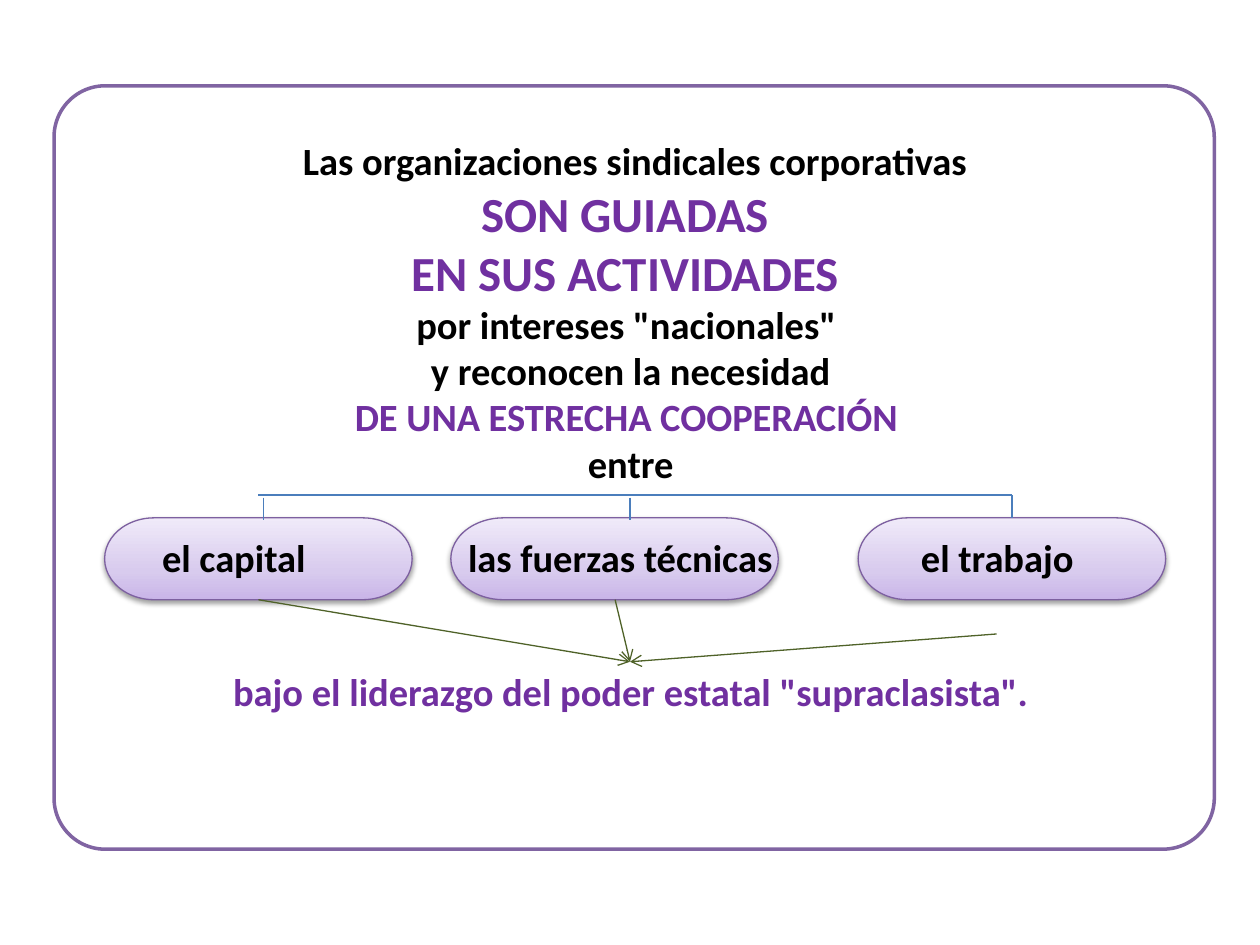
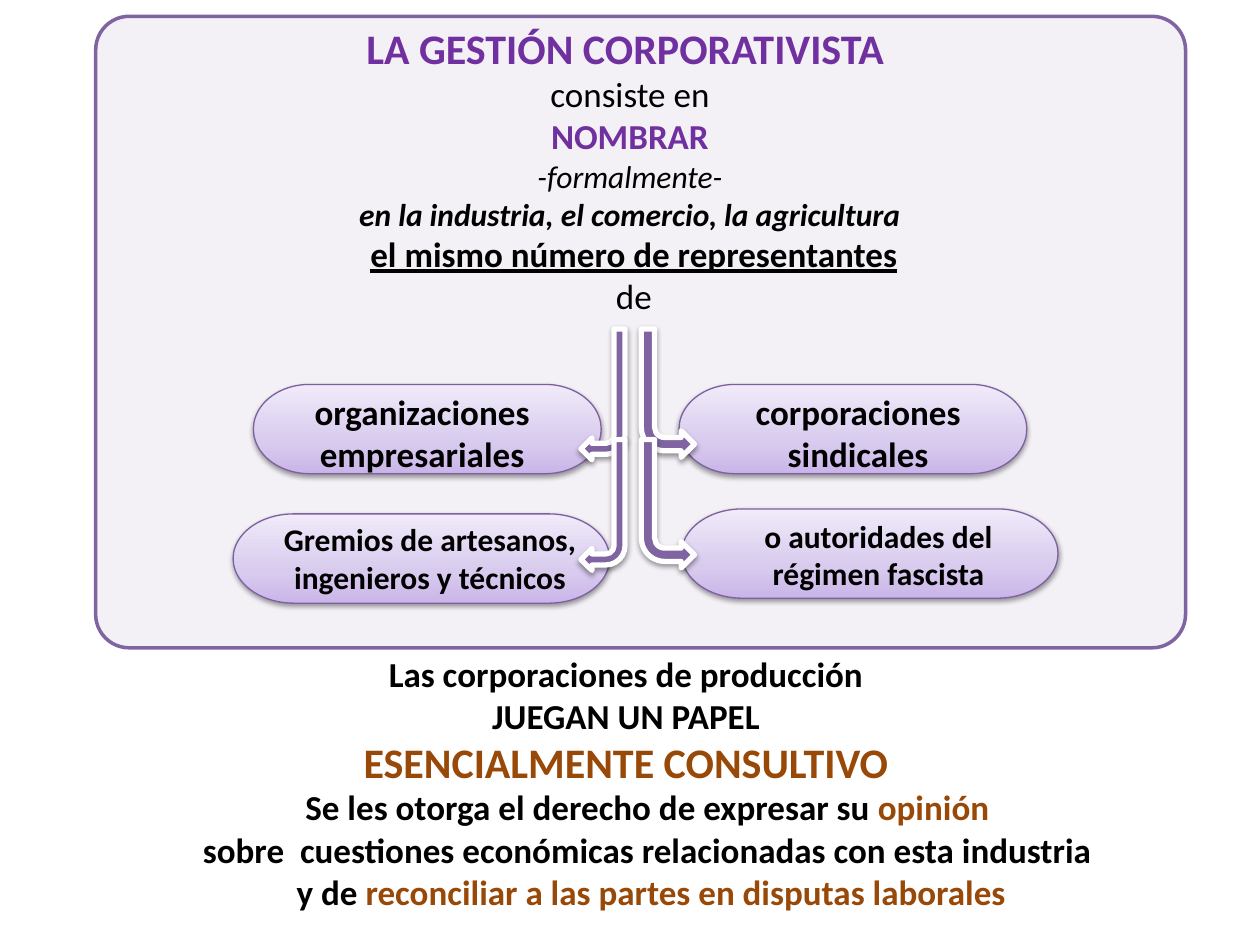
from dataclasses import dataclass

from lxml import etree
from pptx import Presentation
from pptx.dml.color import RGBColor
from pptx.enum.shapes import MSO_CONNECTOR, MSO_SHAPE
from pptx.enum.text import PP_ALIGN
from pptx.oxml import parse_xml
from pptx.oxml.ns import qn
from pptx.util import Cm, Pt

ROUND = MSO_SHAPE.ROUNDED_RECTANGLE
PILL = MSO_SHAPE.FLOWCHART_TERMINATOR
BENT = MSO_SHAPE.BENT_ARROW
LINE = MSO_CONNECTOR.STRAIGHT
CENTER = PP_ALIGN.CENTER
NS = 'xmlns:a="http://schemas.openxmlformats.org/drawingml/2006/main"'


@dataclass(frozen=True)
class Theme:
    font: str = "Calibri"
    ink: str = "000000"
    white: str = "FFFFFF"
    violet: str = "7030A0"
    brown: str = "984807"
    frame: str = "8064A2"
    pale: str = "F3F0F6"
    edge: str = "7D60A0"
    blue: str = "4B7EBC"
    olive: str = "4F6228"
    fade: tuple = ((0, "C9B5E8"), (35, "D8CBEE"), (100, "F0EAF9"))
    huge: int = 28
    large: int = 24
    lead: int = 22
    body: int = 20
    small: int = 18
    thin: float = 0.75
    thick: float = 2
    rim: float = 3


T = Theme()


def rgb(code):
    return RGBColor.from_string(code)


def run(text, size, color=T.ink, style="b"):
    return text, size, color, style


def write(slide, box, *lines):
    frame = slide.shapes.add_textbox(*map(Cm, box)).text_frame
    frame.word_wrap = True
    for index, parts in enumerate(lines):
        para = frame.paragraphs[0] if index == 0 else frame.add_paragraph()
        para.alignment = CENTER
        for text, size, color, style in parts:
            piece = para.add_run()
            piece.text = text
            font = piece.font
            font.name = T.font
            font.size = Pt(size)
            font.color.rgb = rgb(color)
            font.bold = "b" in style
            font.italic = "i" in style
            font.underline = "u" in style


def shape(slide, kind, box, fill, edge, width):
    item = slide.shapes.add_shape(kind, *map(Cm, box))
    item.shadow.inherit = False
    item.fill.solid()
    item.fill.fore_color.rgb = rgb(fill)
    item.line.color.rgb = rgb(edge)
    item.line.width = Pt(width)
    return item


def shade(item):
    effects = item._element.spPr.find(qn("a:effectLst"))
    effects.append(parse_xml(
        f'<a:outerShdw {NS} blurRad="{Pt(3.1)}" dist="{Pt(1.6)}" dir="5400000" rotWithShape="0">'
        f'<a:srgbClr val="{T.ink}"><a:alpha val="38000"/></a:srgbClr></a:outerShdw>'))


def panel(slide, box, fill, curve):
    item = shape(slide, ROUND, box, fill, T.frame, T.thick)
    item.adjustments[0] = curve


def pill(slide, box):
    item = shape(slide, PILL, box, T.pale, T.edge, T.thin)
    stops = "".join(f'<a:gs pos="{spot * 1000}"><a:srgbClr val="{code}"/></a:gs>'
                    for spot, code in T.fade)
    props = item._element.spPr
    props.replace(props.find(qn("a:solidFill")), parse_xml(
        f'<a:gradFill {NS} rotWithShape="1"><a:gsLst>{stops}</a:gsLst>'
        '<a:lin ang="16200000" scaled="0"/></a:gradFill>'))
    shade(item)


def bend(slide, box, flip=False):
    item = shape(slide, BENT, box, T.frame, T.white, T.rim)
    item.rotation = 180
    if flip:
        item._element.spPr.find(qn("a:xfrm")).set("flipH", "1")
    shade(item)


def link(slide, start, end, color, arrow=False):
    item = slide.shapes.add_connector(LINE, *map(Cm, start + end))
    item.line.color.rgb = rgb(color)
    item.line.width = Pt(T.thin)
    if arrow:
        etree.SubElement(item.line._get_or_add_ln(), qn("a:tailEnd"), type="arrow")
    etree.SubElement(item._element.spPr, qn("a:effectLst"))


def guide(slide):
    panel(slide, (1.09, 1.73, 23.39, 15.39), T.white, 0.067)
    for left, width in ((2.11, 6.2), (9.09, 6.6), (17.3, 6.2)):
        pill(slide, (left, 10.44, width, 1.65))
    write(slide, (2.11, 2.64, 21.21, 7.34),
          [run(" Las organizaciones sindicales corporativas", T.lead)],
          [run("SON GUIADAS ", T.huge, T.violet)],
          [run("EN SUS ACTIVIDADES ", T.huge, T.violet)],
          [run('por intereses "nacionales" ', T.lead)],
          [run("y reconocen la necesidad", T.lead)],
          [run("DE UNA ESTRECHA COOPERACIÓN ", T.lead, T.violet)],
          [run("entre", T.lead)])
    write(slide, (2.11, 13.34, 21.21, 1.19),
          [run('bajo el liderazgo del poder estatal "supraclasista".', T.lead, T.violet)])
    for left, width, text in ((2.11, 5.21, "el capital"),
                              (8.71, 7.59, "las fuerzas técnicas"),
                              (17.5, 5.21, "el trabajo")):
        write(slide, (left, 10.64, width, 1.19), [run(text, T.lead)])
    link(slide, (5.21, 9.98), (20.4, 9.98), T.blue)
    for left, top in ((20.4, 9.98), (12.7, 10.03), (5.31, 10.03)):
        link(slide, (left, top), (left, top + 0.46), T.blue)
    for start in ((20.09, 12.78), (5.21, 12.09), (12.4, 12.09)):
        link(slide, start, (12.7, 13.34), T.olive, arrow=True)


def manage(slide):
    panel(slide, (1.93, 0.33, 21.97, 12.73), T.pale, 0.053)
    for left, top, width in ((4.7, 10.36, 7.59), (5.11, 7.75, 7.01),
                             (13.69, 7.75, 7.01), (13.74, 10.26, 7.59)):
        pill(slide, (left, top, width, 1.8))
    write(slide, (1.5, 0.33, 22.4, 7.09),
          [run("LA GESTIÓN CORPORATIVISTA ", T.large, T.violet)],
          [run("consiste en", T.body, style="")],
          [run("NOMBRAR", T.body, T.violet)],
          [run("-formalmente-", T.small, style="i")],
          [run("en la industria, el comercio, la agricultura", T.small, style="bi")],
          [run(" ", T.body, style=""),
           run("el mismo número de representantes", T.body, style="bu")],
          [run(" de", T.body, style="")])
    for left, text in ((5.31, "organizaciones empresariales"),
                       (14.1, "corporaciones sindicales")):
        write(slide, (left, 7.75, 6.4, 1.96), [run(text, T.body)])
    write(slide, (4.9, 10.36, 7.54, 1.8),
          [run("Gremios de artesanos, ingenieros y técnicos", T.small)])
    write(slide, (13.94, 10.29, 7.54, 1.8),
          [run("o autoridades del", T.small)],
          [run("régimen fascista", T.small)])
    for top in (6.63, 8.86):
        bend(slide, (11.71, top, 0.89, 2.64))
        bend(slide, (12.93, top, 1.07, 2.59), flip=True)
    write(slide, (1.5, 13.03, 22.4, 3),
          [run("Las corporaciones de producción ", T.body)],
          [run("JUEGAN UN PAPEL ", T.body)],
          [run("ESENCIALMENTE CONSULTIVO", T.large, T.brown), run(" ", T.body)])
    write(slide, (1.93, 15.72, 22.4, 2.82),
          [run("Se les otorga el derecho de expresar su ", T.body),
           run("opinión ", T.body, T.brown)],
          [run("sobre  cuestiones económicas relacionadas con esta industria ", T.body)],
          [run("y de ", T.body),
           run("reconciliar a las partes en disputas laborales", T.body, T.brown)])


def main():
    deck = Presentation()
    deck.slide_width = Cm(25.4)
    deck.slide_height = Cm(19.05)
    for build in (guide, manage):
        build(deck.slides.add_slide(deck.slide_layouts[6]))
    deck.save("out.pptx")


if __name__ == "__main__":
    main()
